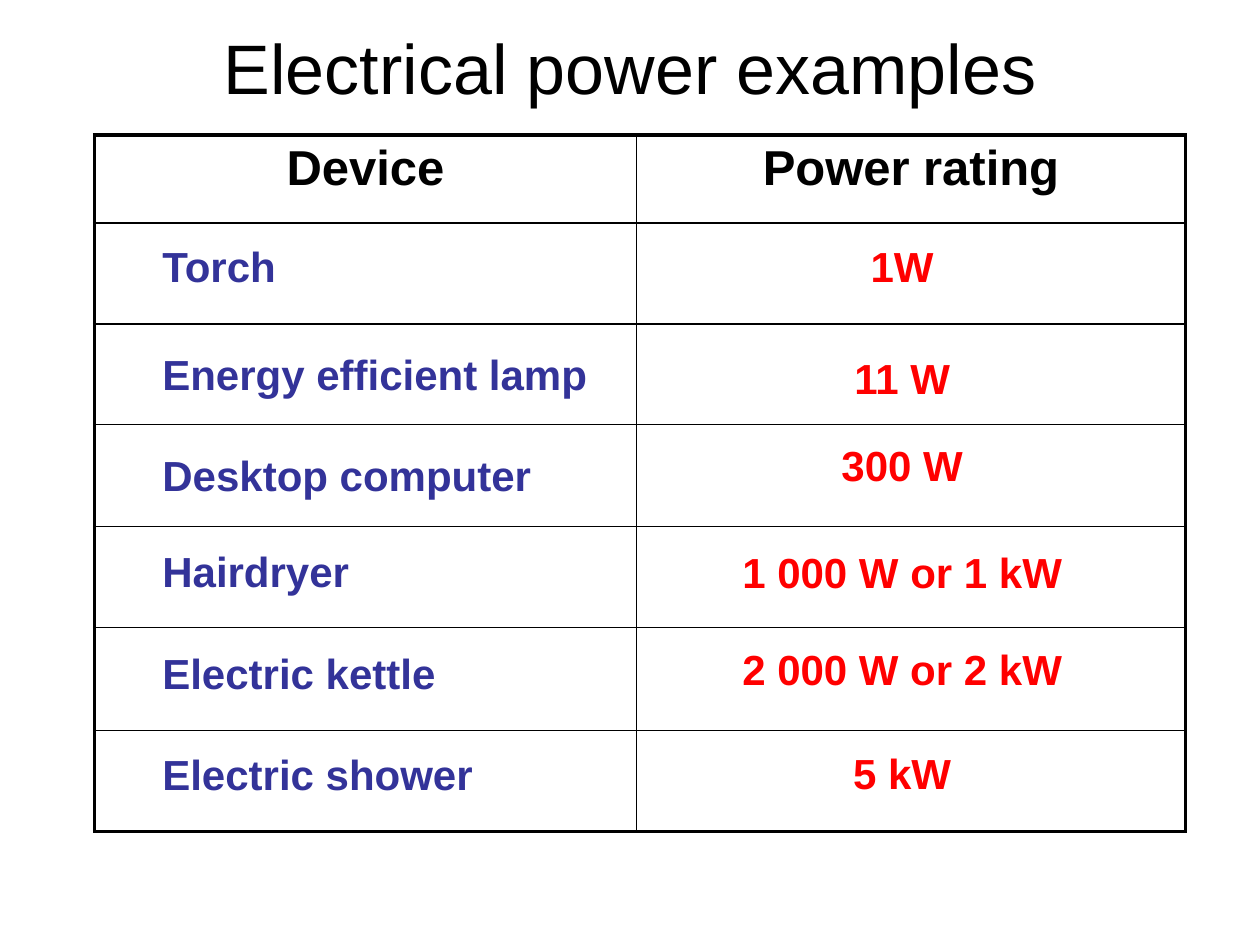
from dataclasses import dataclass
from itertools import accumulate

from lxml import etree
from pptx import Presentation
from pptx import util as u
from pptx.dml.color import RGBColor
from pptx.enum import text as t
from pptx.oxml.ns import qn

COLORS = {"ink": "000000", "device": "333399", "rating": "FF0000"}
FONT = "Arial"
THICK, THIN = 2.25, 1

# Table grid, in inches
LEFT, TOP = 0.75, 1.07
COLUMNS = [4.3, 4.36]
ROWS = [0.7, 0.8, 0.8, 0.81, 0.8, 0.82, 0.8]
ROW_TOPS = list(accumulate(ROWS, initial=TOP))
DEVICE_LEFT = 1.19
RATING_CENTER = 7.16
LABEL_HEIGHT = 0.5


@dataclass
class Label:
    text: str
    width: float
    drop: float  # distance below the top of its row


@dataclass
class Appliance:
    device: Label
    rating: Label


APPLIANCES = [
    Appliance(Label("Torch", 2.13, 0.09), Label("1W", 1.26, 0.09)),
    Appliance(Label("Energy efficient lamp", 3.95, 0.15), Label("11 W", 1.45, 0.18)),
    Appliance(Label("Desktop computer", 4.05, 0.15), Label("300 W", 1.49, 0.07)),
    Appliance(Label("Hairdryer", 2.6, 0.1), Label("1 000 W or 1 kW", 3.52, 0.11)),
    Appliance(Label("Electric kettle", 2.52, 0.11), Label("2 000 W or 2 kW", 3.54, 0.08)),
    Appliance(Label("Electric shower", 3.41, 0.09), Label("5 kW", 2.52, 0.08)),
]


def write(frame, text: str, size: float, color: str, bold: bool, align) -> None:
    frame.text = text
    line = frame.paragraphs[0]
    line.alignment = align
    font = line.runs[0].font
    font.name, font.size, font.bold = FONT, u.Pt(size), bold
    font.color.rgb = RGBColor.from_string(COLORS[color])


def add_label(slide, left: float, top: float, width: float, height: float):
    frame = slide.shapes.add_textbox(*map(u.Inches, (left, top, width, height))).text_frame
    frame.word_wrap = True
    return frame


def set_borders(cell, widths: dict[str, float]) -> None:
    properties = cell._tc.get_or_add_tcPr()
    for position, (side, width) in enumerate(widths.items()):
        border = etree.Element(qn(f"a:ln{side}"), w=str(u.Pt(width)))
        fill = etree.SubElement(border, qn("a:solidFill"))
        etree.SubElement(fill, qn("a:srgbClr"), val=COLORS["ink"])
        properties.insert(position, border)


def add_grid(slide) -> None:
    table = slide.shapes.add_table(
        len(ROWS), len(COLUMNS),
        *map(u.Inches, (LEFT, TOP, sum(COLUMNS), sum(ROWS)))).table
    table.first_row = table.horz_banding = False
    for column, width in zip(table.columns, COLUMNS):
        column.width = u.Inches(width)
    for row, height in zip(table.rows, ROWS):
        row.height = u.Inches(height)

    # Thick outer frame, thin inner rules
    for r in range(len(ROWS)):
        for c in range(len(COLUMNS)):
            cell = table.cell(r, c)
            cell.fill.background()
            edges = {"L": c == 0, "R": c == len(COLUMNS) - 1,
                     "T": r == 0, "B": r == len(ROWS) - 1}
            set_borders(cell, {side: THICK if outer else THIN
                               for side, outer in edges.items()})

    for c, heading in enumerate(("Device", "Power rating")):
        write(table.cell(0, c).text_frame, heading, 28, "ink", True, t.PP_ALIGN.CENTER)


def add_entry(slide, label: Label, left: float, row_top: float, color: str, align) -> None:
    frame = add_label(slide, left, row_top + label.drop, label.width, LABEL_HEIGHT)
    frame.auto_size = t.MSO_AUTO_SIZE.SHAPE_TO_FIT_TEXT
    write(frame, label.text, 24, color, True, align)


def main() -> None:
    deck = Presentation()
    deck.slide_width, deck.slide_height = u.Inches(10), u.Inches(7.5)
    slide = deck.slides.add_slide(deck.slide_layouts[6])

    # Title
    title = add_label(slide, 0.5, 0.3, 9, 0.46)
    title.vertical_anchor = t.MSO_ANCHOR.MIDDLE
    write(title, "Electrical power examples", 40, "ink", False, t.PP_ALIGN.CENTER)

    # Table and the entries laid over its rows
    add_grid(slide)
    for appliance, row_top in zip(APPLIANCES, ROW_TOPS[1:]):
        device, rating = appliance.device, appliance.rating
        add_entry(slide, device, DEVICE_LEFT, row_top, "device", t.PP_ALIGN.LEFT)
        add_entry(slide, rating, RATING_CENTER - rating.width / 2, row_top,
                  "rating", t.PP_ALIGN.CENTER)

    deck.save("out.pptx")


if __name__ == "__main__":
    main()
